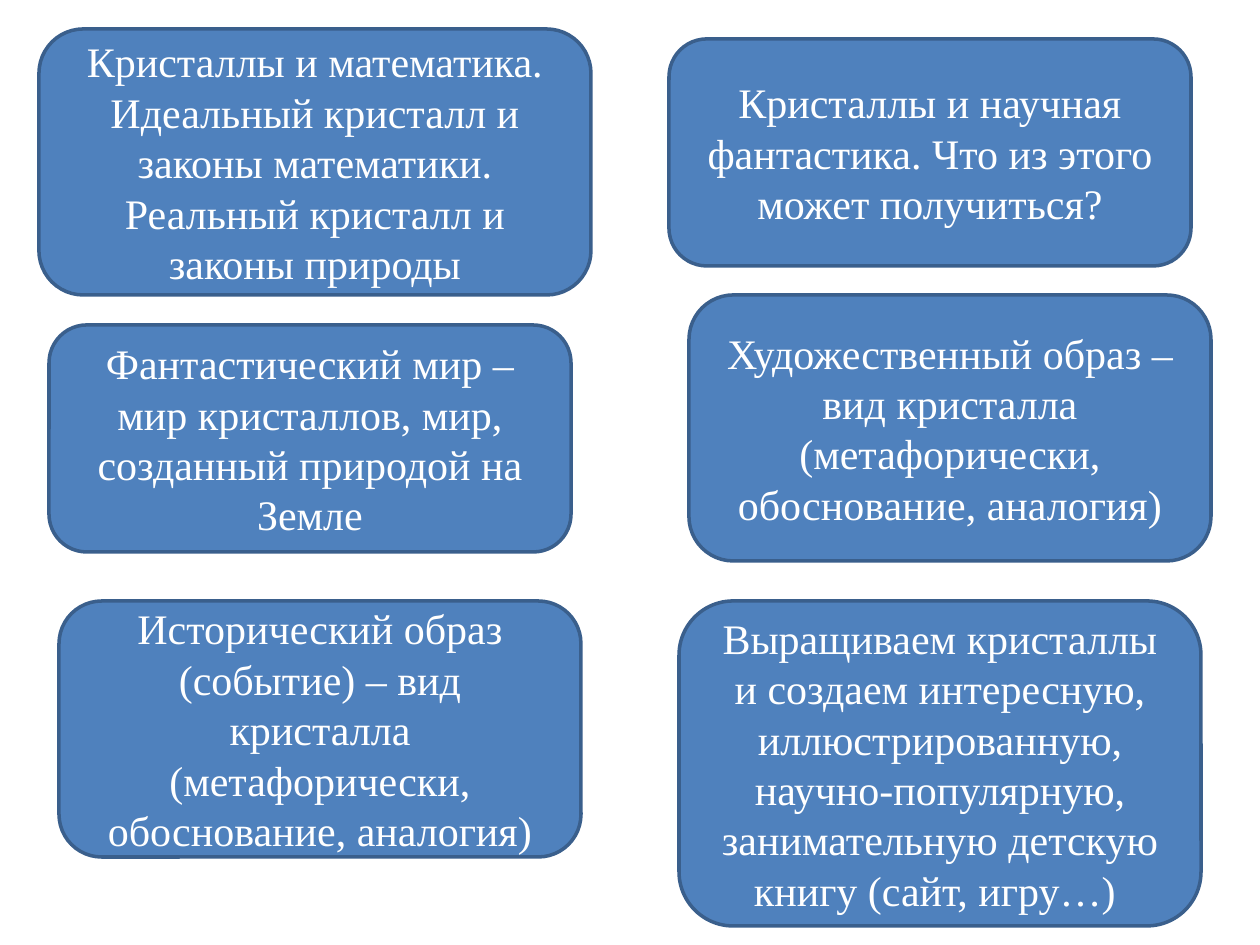
from pptx import Presentation
from pptx.dml.color import RGBColor
from pptx.enum.shapes import MSO_SHAPE
from pptx.enum.text import MSO_ANCHOR, PP_ALIGN
from pptx.util import Emu, Pt

ROUND = MSO_SHAPE.ROUNDED_RECTANGLE
MIDDLE = MSO_ANCHOR.MIDDLE
CENTER = PP_ALIGN.CENTER
COLORS = {"fill": "4F81BD", "line": "3A5F8C", "text": "FFFFFF"}
FONT = "Times New Roman"
WIDTH = 522


def px(n):
    return Emu(round(n * 914400 / 126))


def color(name):
    return RGBColor.from_string(COLORS[name])


cards = [
    (679, 601, WIDTH, 325, "Выращиваем кристаллы и создаем интересную, иллюстрированную, "
     "научно-популярную, занимательную детскую книгу (сайт, игру…) "),
    (39, 29, 552, 266, "Кристаллы и математика. Идеальный кристалл и законы математики. "
     "Реальный кристалл и законы природы"),
    (669, 39, WIDTH, 227, "Кристаллы и научная фантастика. Что из этого может получиться?"),
    (49, 325, WIDTH, 227, "Фантастический мир – мир кристаллов, мир, созданный природой на Земле"),
    (689, 295, WIDTH, 266, "Художественный образ – вид кристалла "
     "(метафорически, обоснование, аналогия)"),
    (59, 601, WIDTH, 256, "Исторический образ (событие) – вид кристалла "
     "(метафорически, обоснование, аналогия)"),
]

deck = Presentation()
deck.slide_width = px(1260)
deck.slide_height = px(945)
slide = deck.slides.add_slide(deck.slide_layouts[6])

for left, top, width, height, text in cards:
    card = slide.shapes.add_shape(ROUND, px(left), px(top), px(width), px(height))
    card.shadow.inherit = False
    card.fill.solid()
    card.fill.fore_color.rgb = color("fill")
    card.line.color.rgb = color("line")
    card.line.width = Pt(2)
    frame = card.text_frame
    frame.word_wrap = True
    frame.vertical_anchor = MIDDLE
    frame.text = text
    para = frame.paragraphs[0]
    para.alignment = CENTER
    font = para.runs[0].font
    font.name = FONT
    font.size = Pt(24)
    font.color.rgb = color("text")

deck.save("out.pptx")
